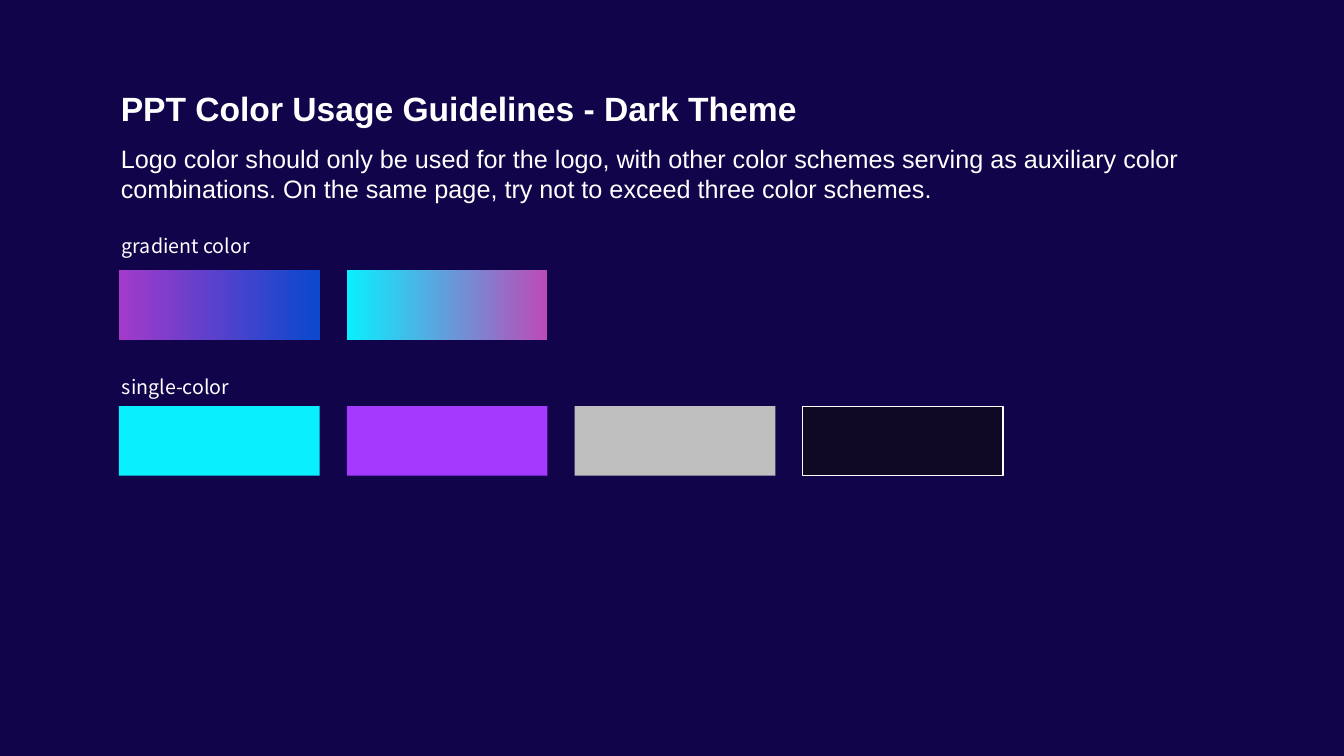
import pptx
import pptx.dml.color
import pptx.enum.shapes
import pptx.enum.text
import pptx.util

Inches = pptx.util.Inches
RGBColor = pptx.dml.color.RGBColor

NAVY = RGBColor(0x11, 0x04, 0x4A)
WHITE = RGBColor(0xFF, 0xFF, 0xFF)
ORCHID = RGBColor(0xA3, 0x3A, 0xCA)
BLUE = RGBColor(0x0D, 0x48, 0xCE)
CYAN = RGBColor(0x0A, 0xEF, 0xFE)
PINK = RGBColor(0xBA, 0x4C, 0xB8)
PURPLE = RGBColor(0xA4, 0x3A, 0xFE)
GREY = RGBColor(0xBF, 0xBF, 0xBF)
BLACK = RGBColor(0x10, 0x09, 0x24)

SANS = "Arial"
NOTO = "Noto Sans CJK SC"
WIDE, HIGH, STEP = 1.99, 0.69, 2.26  # swatch size and pitch


def add_text(slide, box, text, size, face, bold=False):
    label = slide.shapes.add_textbox(*map(Inches, box))
    frame = label.text_frame
    frame.word_wrap = True
    frame.auto_size = pptx.enum.text.MSO_AUTO_SIZE.SHAPE_TO_FIT_TEXT
    para = frame.paragraphs[0]
    para.text = text
    font = para.font
    font.name, font.size, font.bold = face, pptx.util.Pt(size), bold
    font.color.rgb = WHITE


def add_swatch(slide, left, top, tones, end, edge):
    rect = slide.shapes.add_shape(
        pptx.enum.shapes.MSO_SHAPE.RECTANGLE,
        Inches(left), Inches(top), Inches(WIDE), Inches(HIGH))
    rect.shadow.inherit = False
    # One tone fills solid, two tones blend left to right
    if len(tones) == 1:
        rect.fill.solid()
        rect.fill.fore_color.rgb = tones[0]
    else:
        rect.fill.gradient()
        rect.fill.gradient_angle = 0
        for stop, tone, place in zip(rect.fill.gradient_stops, tones, (0, end)):
            stop.color.rgb = tone
            stop.position = place
    if edge:
        rect.line.color.rgb = edge
        rect.line.width = pptx.util.Pt(1)
    else:
        rect.line.fill.background()


def add_head(slide, left, top):
    add_text(slide, (left, top, 7.46, 0.5),
             "PPT Color Usage Guidelines - Dark Theme", 24, SANS, True)
    add_text(slide, (left, top + 0.55, 11.14, 0.71),
             "Logo color should only be used for the logo, with other color "
             "schemes serving as auxiliary color combinations. On the same "
             "page, try not to exceed three color schemes.", 18, SANS)


def add_row(slide, left, top, width, gap, title, items):
    add_text(slide, (left, top, width, 0.34), title, 14, NOTO)
    for col, (tones, end, edge) in enumerate(items):
        add_swatch(slide, left + 0.07 + col * STEP, top + gap, tones, end, edge)


def main():
    deck = pptx.Presentation()
    deck.slide_width, deck.slide_height = Inches(13.33), Inches(7.5)
    slide = deck.slides.add_slide(deck.slide_layouts[6])
    slide.background.fill.solid()
    slide.background.fill.fore_color.rgb = NAVY

    # Title and guidance
    add_head(slide, 1.1, 0.82)

    # Swatch rows: tones, end of blend, outline
    add_row(slide, 1.11, 2.27, 2.88, 0.41, "gradient color", [
        ((ORCHID, BLUE), 0.97, None),
        ((CYAN, PINK), 0.99, None),
    ])
    add_row(slide, 1.11, 3.67, 1.31, 0.36, "single-color", [
        ((CYAN,), None, None),
        ((PURPLE,), None, None),
        ((GREY,), None, None),
        ((BLACK,), None, WHITE),
    ])
    deck.save("out.pptx")


if __name__ == "__main__":
    main()
